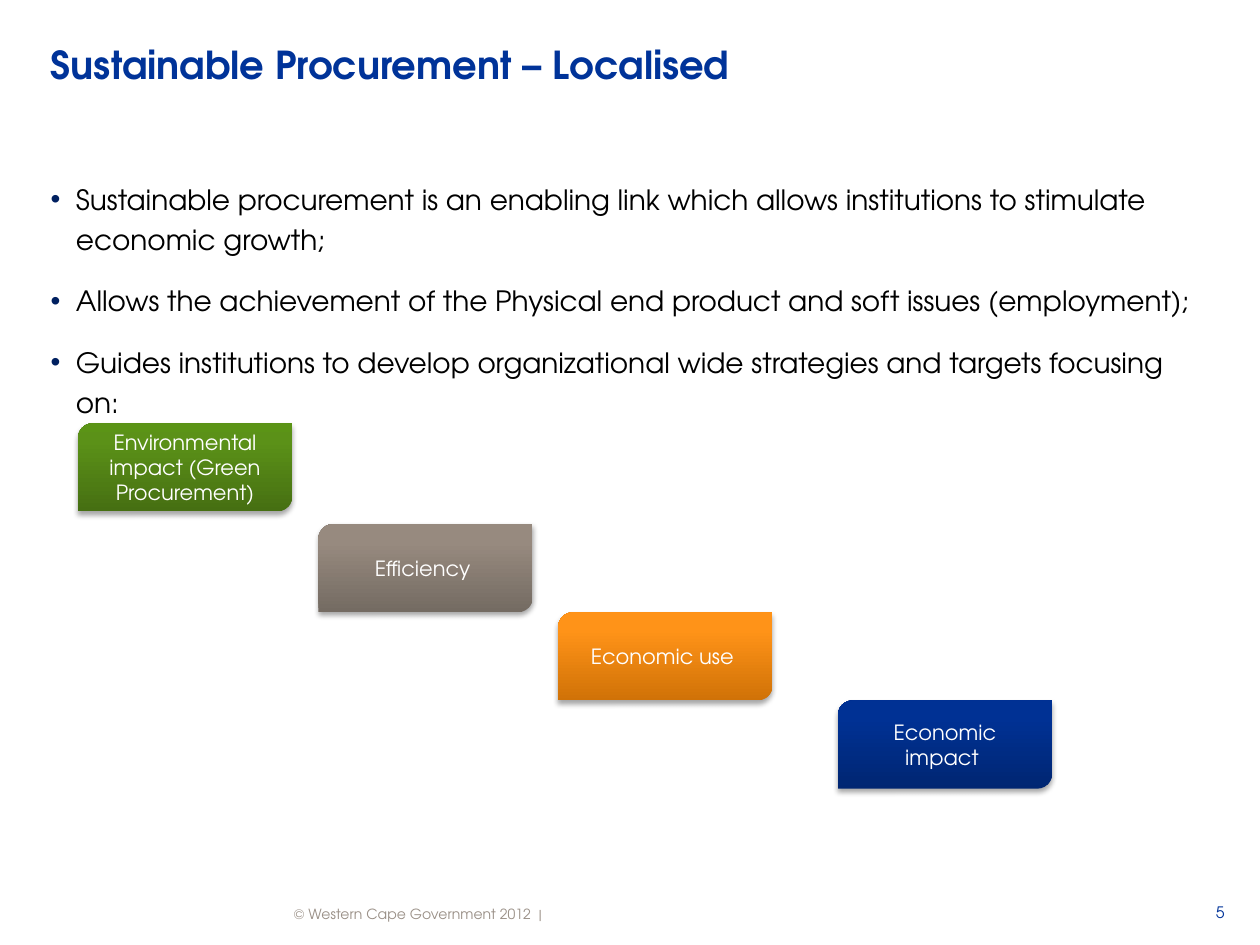
from lxml import etree
from pptx import Presentation
from pptx.dml.color import RGBColor
from pptx.enum import shapes, text
from pptx.oxml.ns import qn
from pptx.util import Pt

FONT = "TeX Gyre Adventor"
MID, LOW = text.MSO_ANCHOR.MIDDLE, text.MSO_ANCHOR.BOTTOM
LEFT, MEAN, RIGHT = text.PP_ALIGN.LEFT, text.PP_ALIGN.CENTER, text.PP_ALIGN.RIGHT


def add(parent, tag, **attrs):
    """Append a DrawingML element and return it."""
    item = etree.SubElement(parent, qn("a:" + tag))
    for key, val in attrs.items():
        item.set(key, str(val))
    return item


def write(shape, *lines, size, color, bold=False, align=LEFT, anchor=MID,
          pad=(6, 6, 6, 6), bullet=None):
    """Fill a shape with one paragraph per line; bullet is the bullet colour."""
    frame = shape.text_frame
    frame.word_wrap = True
    frame.auto_size = text.MSO_AUTO_SIZE.NONE
    frame.vertical_anchor = anchor
    (frame.margin_left, frame.margin_top,
     frame.margin_right, frame.margin_bottom) = map(Pt, pad)
    for i, line in enumerate(lines):
        para = frame.add_paragraph() if i else frame.paragraphs[0]
        run = para.add_run()
        run.text = line
        run.font.name, run.font.size, run.font.bold = FONT, Pt(size), bold
        run.font.color.rgb = RGBColor.from_string(color)
        para.alignment = align
        para.space_before = Pt(12 if i else 0)
        if bullet:
            props = para._p.get_or_add_pPr()
            props.set("marL", str(Pt(14.4)))
            props.set("indent", str(-Pt(14.4)))
            add(add(props, "buClr"), "srgbClr", val=bullet)
            add(props, "buFont", typeface="Arial")
            add(props, "buChar", char="•")
            para.line_spacing = 1.2


deck = Presentation()
deck.slide_width, deck.slide_height = Pt(720), Pt(540)
slide = deck.slides.add_slide(deck.slide_layouts[1])

# Title and bullet list
title, body = slide.placeholders
title.left, title.top, title.width, title.height = map(Pt, (23, 14.4, 676.8, 43.9))
write(title, "Sustainable Procurement – Localised", size=22, color="003399", bold=True)

body.left, body.top, body.width, body.height = map(Pt, (23, 94.3, 676.8, 385.2))
write(body,
      "Sustainable procurement is an enabling link which allows institutions "
      "to stimulate economic growth;",
      "Allows the achievement of the Physical end product and soft issues (employment);",
      "Guides institutions to develop organizational wide strategies and targets focusing on:",
      size=16, color="000000", anchor=text.MSO_ANCHOR.TOP, bullet="002060")

# Descending steps: label, left, top, gradient from bottom to top
steps = [
    ("Environmental impact (Green Procurement)", 44.6, 241.9, "466F12 5B9118 5B9416"),
    ("Efficiency ", 182, 299.5, "746B62 978A7F 988B7F"),
    ("Economic use ", 319, 349.9, "D07207 FF9318 FF9419"),
    ("Economic impact ", 478.8, 400.3, "002672 003194 003295"),
]
for label, left, top, tones in steps:
    step = slide.shapes.add_shape(shapes.MSO_SHAPE.ROUND_2_DIAG_RECTANGLE,
                                  Pt(left), Pt(top), Pt(122.4), Pt(50.4))
    props = step._element.spPr
    grad = add(props, "gradFill", rotWithShape=1)
    stops = add(grad, "gsLst")
    for pos, tone in zip((0, 80, 100), tones.split()):
        add(add(stops, "gs", pos=pos * 1000), "srgbClr", val=tone)
    add(grad, "lin", ang=270 * 60000, scaled=0)
    step.line.fill.background()
    step.shadow.inherit = False
    cast = add(props.find(qn("a:effectLst")), "outerShdw", blurRad=Pt(3.1),
               dist=Pt(1.8), dir=90 * 60000, rotWithShape=0)
    add(add(cast, "srgbClr", val="000000"), "alpha", val=35000)
    write(step, label, size=12, color="FFFFFF", align=MEAN, pad=(7.2, 3.6, 7.2, 3.6))

# Footer and page number
foot = slide.shapes.add_textbox(Pt(162), Pt(509), Pt(153.4), Pt(18))
write(foot, "© Western Cape Government 2012  |", size=8, color="998F86",
      anchor=LOW, pad=(6, 6, 0, 0))
page = slide.shapes.add_textbox(Pt(659.5), Pt(509), Pt(40.3), Pt(18))
write(page, "5", size=9, color="003399", align=RIGHT, pad=(6, 6, 0, 0))

deck.save("out.pptx")
